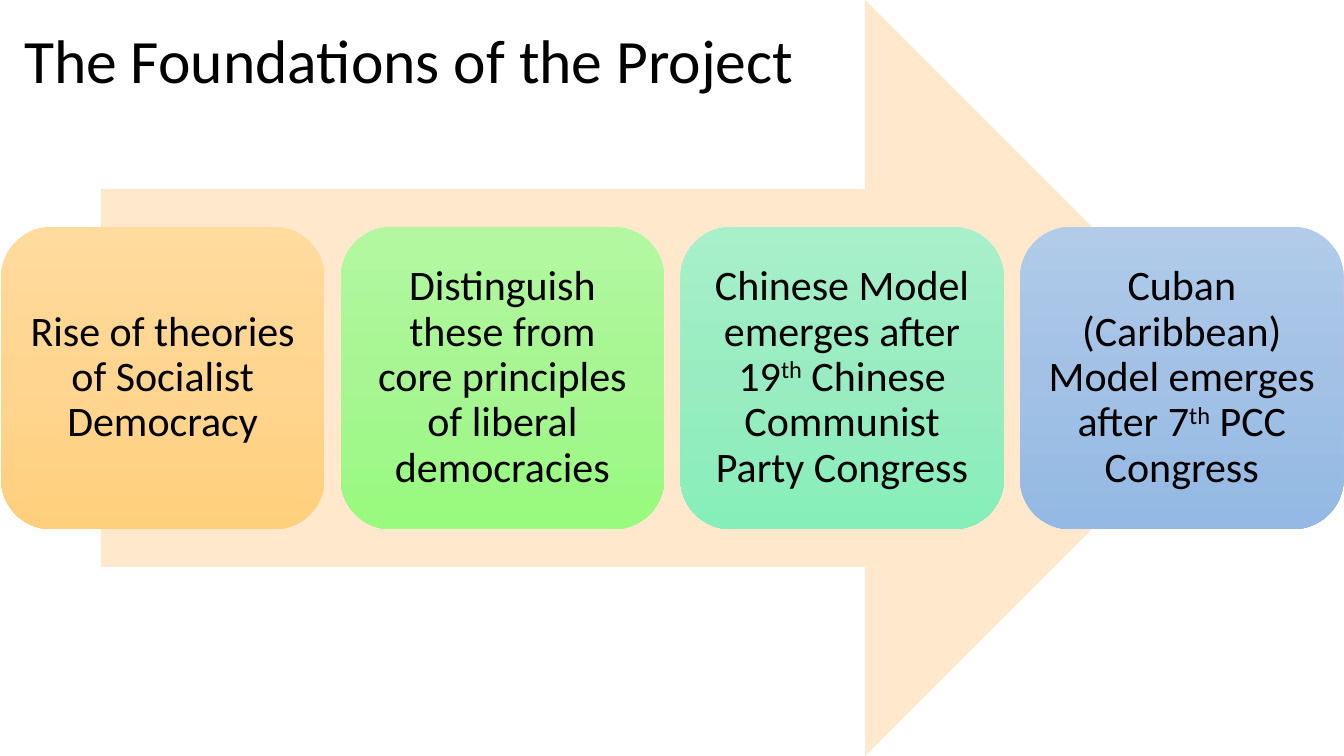
"""Build the slide on the foundations of the project."""
from copy import deepcopy

from pptx import Presentation
from pptx.dml.color import RGBColor
from pptx.enum.shapes import MSO_SHAPE
from pptx.enum.text import MSO_ANCHOR, PP_ALIGN
from pptx.oxml.ns import qn
from pptx.util import Pt

ARROW = MSO_SHAPE.RIGHT_ARROW
ROUNDED = MSO_SHAPE.ROUNDED_RECTANGLE
MIDDLE = MSO_ANCHOR.MIDDLE
CENTER = PP_ALIGN.CENTER

BLACK = RGBColor(0x00, 0x00, 0x00)
PEACH = RGBColor(0xFF, 0xE8, 0xCC)
ORANGES = [RGBColor(0xFF, 0xDB, 0x9E), RGBColor(0xFF, 0xD5, 0x90), RGBColor(0xFF, 0xD0, 0x7C)]
GREENS = [RGBColor(0xB3, 0xF8, 0xA1), RGBColor(0xA7, 0xF6, 0x93), RGBColor(0x98, 0xFA, 0x7E)]
TEALS = [RGBColor(0xA8, 0xF0, 0xCA), RGBColor(0x99, 0xEC, 0xC1), RGBColor(0x86, 0xEE, 0xB9)]
BLUES = [RGBColor(0xB1, 0xCB, 0xE9), RGBColor(0xA3, 0xC1, 0xE5), RGBColor(0x93, 0xB9, 0xE4)]

STEPS = [
    (ORANGES, ["Rise of theories of Socialist Democracy"]),
    (GREENS, ["Distinguish these from core principles of liberal democracies"]),
    (TEALS, ["Chinese Model emerges after 19", "th", " Chinese Communist Party Congress"]),
    (BLUES, ["Cuban (Caribbean) Model emerges after 7", "th", " PCC Congress"]),
]
STEP_LEFT, STEP_PITCH, STEP_WIDTH = 0.7, 242.65, 231.1
STEP_INSET = Pt(8.64)


def write(box, texts, size):
    """Fill a box with one centred paragraph, raising ordinal endings."""
    frame = box.text_frame
    frame.word_wrap = True
    frame.vertical_anchor = MIDDLE
    para = frame.paragraphs[0]
    para.alignment = CENTER
    para.line_spacing = 0.9
    for text in texts:
        span = para.add_run()
        span.text = text
        span.font.name = "Calibri"
        span.font.size = Pt(size)
        span.font.color.rgb = BLACK
        if text == "th":
            span._r.get_or_add_rPr().set("baseline", "30000")


deck = Presentation()
deck.slide_width = Pt(960)
deck.slide_height = Pt(540)
page = deck.slides.add_slide(deck.slide_layouts[6])

title = page.shapes.add_textbox(Pt(0), Pt(0), Pt(584.6), Pt(91.4))
write(title, ["The Foundations of the Project"], 44)

arrow = page.shapes.add_shape(ARROW, Pt(72), Pt(0), Pt(816), Pt(540))
arrow.shadow.inherit = False
arrow.fill.solid()
arrow.fill.fore_color.rgb = PEACH
arrow.line.fill.background()

for index, (colours, texts) in enumerate(STEPS):
    left = STEP_LEFT + index * STEP_PITCH
    step = page.shapes.add_shape(ROUNDED, Pt(left), Pt(162), Pt(STEP_WIDTH), Pt(216))
    step.shadow.inherit = False
    step.line.fill.background()
    step.fill.gradient()
    step.fill.gradient_angle = 270
    stop_list = step._element.spPr.find(".//" + qn("a:gsLst"))
    stop_list.insert(1, deepcopy(stop_list[0]))
    for stop, colour, position in zip(step.fill.gradient_stops, colours, (0, 0.5, 1)):
        stop.color.rgb = colour
        stop.position = position
    frame = step.text_frame
    frame.margin_left = frame.margin_right = STEP_INSET
    frame.margin_top = frame.margin_bottom = STEP_INSET
    write(step, texts, 30)

deck.save("out.pptx")
